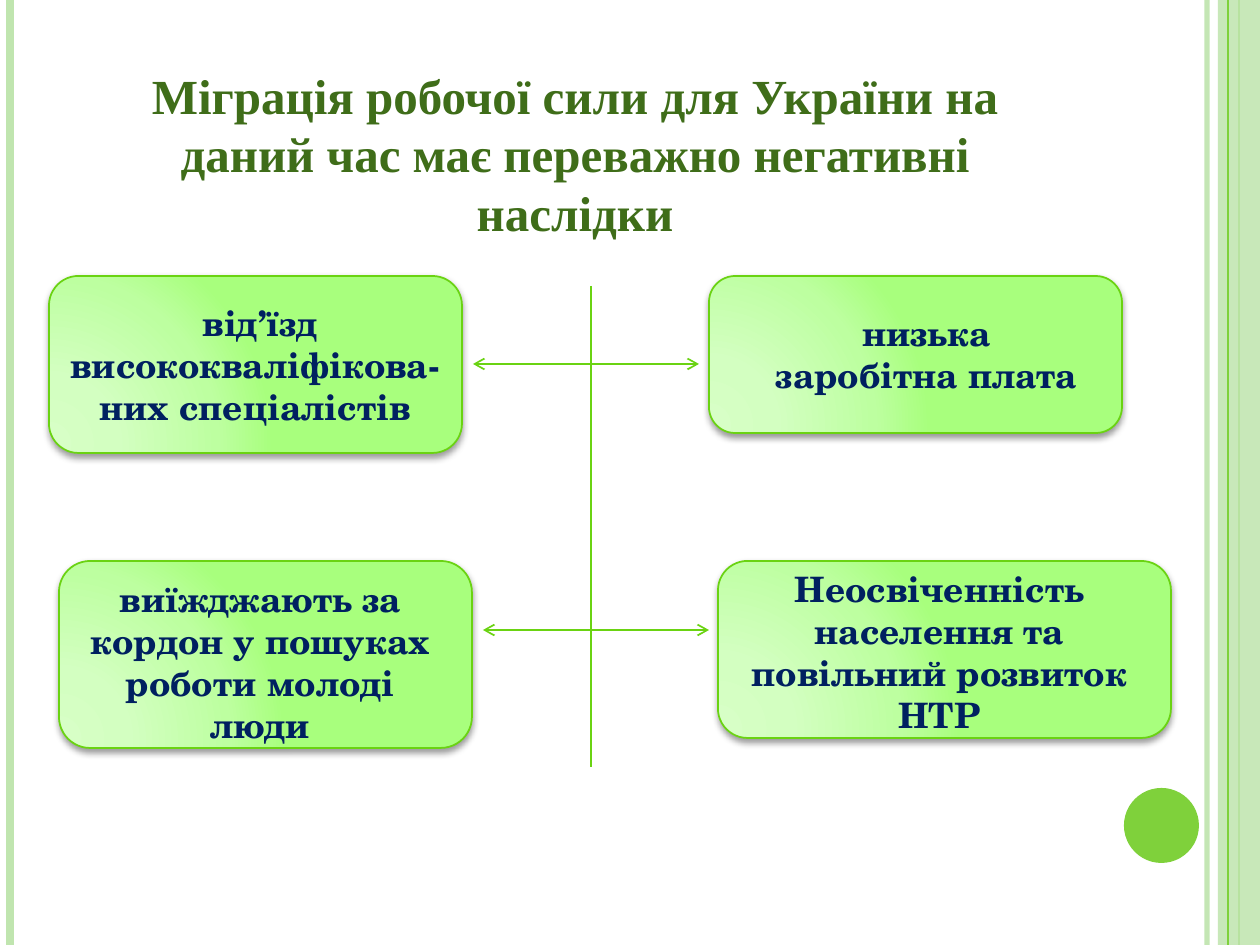
from lxml.etree import SubElement
from pptx import Presentation
from pptx.dml.color import RGBColor
from pptx.enum.shapes import MSO_CONNECTOR as CONN, MSO_SHAPE as SHAPE
from pptx.enum.text import MSO_ANCHOR as ANCHOR, MSO_AUTO_SIZE as AUTO, PP_ALIGN as ALIGN
from pptx.oxml import parse_xml
from pptx.oxml.ns import nsdecls, qn
from pptx.util import Emu, Pt

PX = 914400 / 126
GREEN = RGBColor(0x7F, 0xD1, 0x3B)
PALE = RGBColor(0xC0, 0xE5, 0xAF)
EDGE = RGBColor(0x6A, 0xD3, 0x12)
TITLE = RGBColor(0x3F, 0x6D, 0x19)
NAVY = RGBColor(0x00, 0x20, 0x60)
STOPS = [(0, "D7FFC6"), (30, "D3FFC1"), (75, "BDFFA0"), (100, "A8FF7D")]


def px(*values):
    return [Emu(round(v * PX)) for v in values]


def write(tf, text, size=20, font="TeX Gyre Schola", color=NAVY, spacing=None):
    tf.word_wrap = True
    tf.auto_size = AUTO.NONE
    tf.vertical_anchor = ANCHOR.TOP
    p = tf.paragraphs[0]
    p.alignment = ALIGN.CENTER
    if spacing:
        p.line_spacing = Pt(spacing)
    r = p.add_run()
    r.text = text
    r.font.size, r.font.name, r.font.bold = Pt(size), font, True
    r.font.color.rgb = color


def set_alpha(fill, percent):
    clr = fill._xPr.find(qn("a:solidFill"))[0]
    SubElement(clr, qn("a:alpha")).set("val", str(percent * 1000))


class Deck:
    """Draws the elements of the current slide in one green style."""

    def __init__(self):
        self.prs = Presentation()
        self.prs.slide_width, self.prs.slide_height = px(1260, 945)
        self.s = self.prs.slides.add_slide(self.prs.slide_layouts[5])

    def title(self, text, *box):
        sp = self.s.shapes.title
        sp.left, sp.top, sp.width, sp.height = px(*box)
        write(sp.text_frame, text, size=28, font="Times New Roman", color=TITLE, spacing=33.5)

    def text(self, text, *box):
        write(self.s.shapes.add_textbox(*px(*box)).text_frame, text)

    def plain(self, kind, color, *box, alpha=100):
        sp = self.s.shapes.add_shape(kind, *px(*box))
        sp.shadow.inherit = False
        sp.fill.solid()
        sp.fill.fore_color.rgb = color
        sp.line.fill.background()
        if alpha < 100:
            set_alpha(sp.fill, alpha)

    def card(self, *box):
        sp = self.s.shapes.add_shape(SHAPE.ROUNDED_RECTANGLE, *px(*box))
        sp.shadow.inherit = False
        sp.line.color.rgb = EDGE
        sp.line.width = Pt(1)
        stops = "".join(f'<a:gs pos="{pos * 1000}"><a:srgbClr val="{c}"/></a:gs>' for pos, c in STOPS)
        sp._element.spPr.find(qn("a:prstGeom")).addnext(parse_xml(
            f'<a:gradFill rotWithShape="1" {nsdecls("a")}><a:gsLst>{stops}</a:gsLst><a:path path="circle">'
            '<a:fillToRect l="5000" t="100000" r="120000" b="10000"/></a:path></a:gradFill>'))
        sp._element.spPr.find(qn("a:effectLst")).append(parse_xml(
            f'<a:outerShdw blurRad="{Pt(4)}" dist="{Pt(2)}" dir="5400000" rotWithShape="0" {nsdecls("a")}>'
            '<a:srgbClr val="000000"><a:alpha val="40000"/></a:srgbClr></a:outerShdw>'))

    def line(self, *ends, color=EDGE, width=1, alpha=100, arrow=False):
        cx = self.s.shapes.add_connector(CONN.STRAIGHT, *px(*ends))
        cx.line.color.rgb = color
        cx.line.width = Pt(width)
        if alpha < 100:
            set_alpha(cx.line.fill, alpha)
        if arrow:
            SubElement(cx.line._get_or_add_ln(), qn("a:tailEnd")).set("type", "arrow")
        SubElement(cx._element.spPr, qn("a:effectLst"))

    def rule(self, x, **style):
        self.line(x, 0, x, 945, **style)


def main():
    d = Deck()
    d.rule(1207, color=PALE, width=3, alpha=93)
    d.rule(10, color=PALE, width=4.5)
    d.rule(1239, color=GREEN, width=1.5)
    d.plain(SHAPE.RECTANGLE, PALE, 1218, 0, 42, 945, alpha=87)
    d.rule(1228, color=GREEN, width=0.75)
    d.plain(SHAPE.OVAL, GREEN, 1124, 788, 75, 75)
    d.title("Міграція робочої сили для України на даний час має переважно негативні наслідки",
            88, 59, 974, 190)
    consequences = [
        (" від’їзд висококваліфікова-них спеціалістів", (49, 276, 413, 177), (49, 295, 413, 140)),
        ("виїжджають за кордон у пошуках роботи молоді люди", (59, 561, 413, 187), (59, 571, 403, 183)),
        ("низька заробітна плата", (709, 276, 413, 157), (759, 305, 335, 97)),
        ("Неосвіченність населення та повільний розвиток НТР", (718, 561, 453, 177), (738, 561, 403, 183)),
    ]
    for text, card, box in consequences:
        d.card(*card)
        d.text(text, *box)
    axis = 591
    d.line(axis, 286, axis, 767)
    for y, left, right in [(364, 473, 699), (630, 483, 709)]:
        for x in (right, left):
            d.line(axis, y, x, y, arrow=True)
    d.prs.save("out.pptx")


if __name__ == "__main__":
    main()
